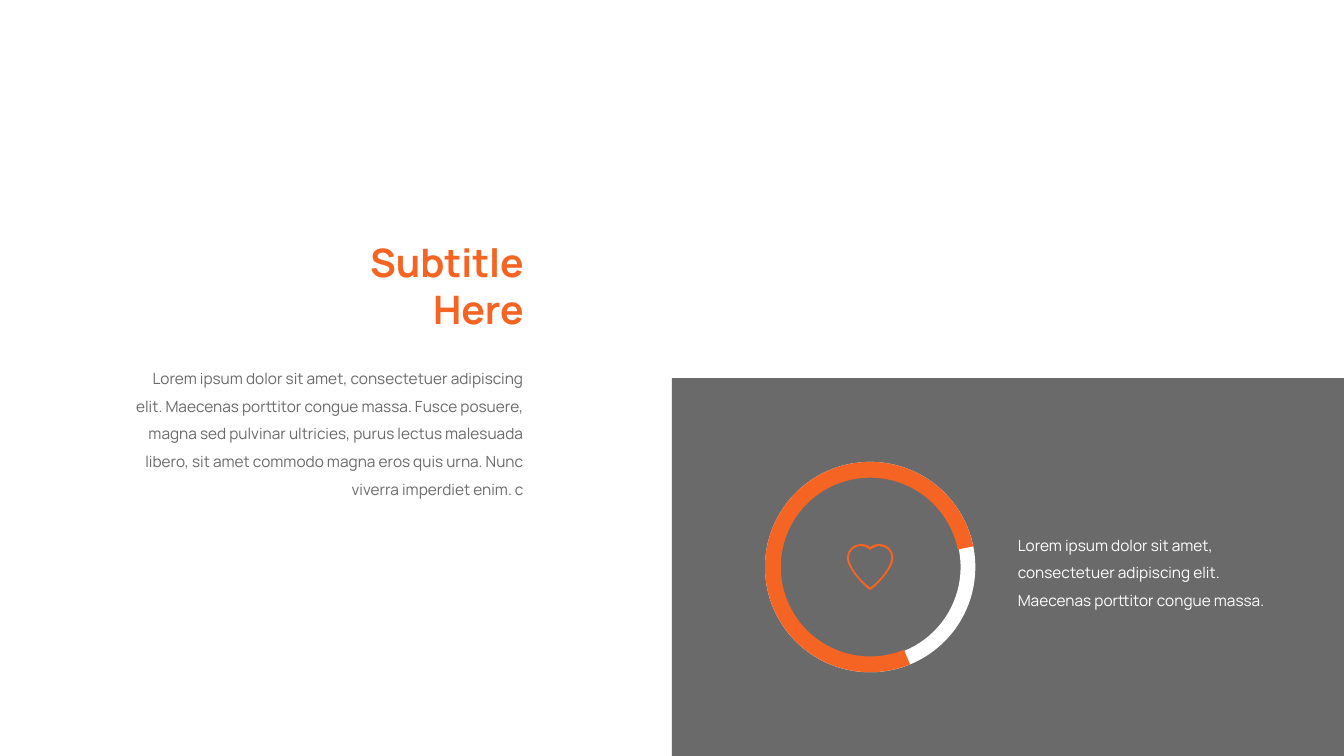
from lxml import etree
from pptx import Presentation
from pptx.dml.color import RGBColor
from pptx.enum.shapes import MSO_SHAPE as Shape
from pptx.enum.text import MSO_ANCHOR as Anchor, MSO_AUTO_SIZE as AutoSize, PP_ALIGN as Align
from pptx.oxml.ns import qn
from pptx.util import Cm, Pt

COLORS = {"gray": "6A6A6A", "orange": "F56423", "white": "FFFFFF"}
WIDTH, HEIGHT = 33.87, 19.05
RING_X, RING_Y, RING_SIZE = 19.28, 11.64, 5.3
HEART_TOP, HEART_UNIT = 13.71, 0.0254
HEART_OUTER = [(0, 3), (2, 1), (6, 0), (9, 0), (17, 0), (23, 6), (23, 13),
               (23, 14), (23, 15), (23, 15), (21, 28), (2, 45.5), (0, 45.5)]
HEART_INNER = [(0, 6), (0, 6), (1, 5), (1, 5), (4, 3), (6, 2), (9, 2),
               (16, 2), (21, 7), (21, 13), (21, 14), (21, 14), (21, 14),
               (20, 26), (4, 41), (0, 43)]


class SlideBuilder:
    font = "Manrope"

    def __init__(self, slide):
        self.slide = slide

    def paint(self, sp, color):
        sp.shadow.inherit = False
        sp.fill.solid()
        sp.fill.fore_color.rgb = RGBColor.from_string(COLORS[color])
        sp.line.fill.background()

    def shape(self, kind, x, y, w, h, color, adjustments=()):
        sp = self.slide.shapes.add_shape(kind, Cm(x), Cm(y), Cm(w), Cm(h))
        for i, value in enumerate(adjustments):
            sp.adjustments[i] = value
        self.paint(sp, color)

    def text(self, x, y, w, h, lines, size, color, align=Align.LEFT,
             spacing=1.0, bold=False, anchor=Anchor.TOP):
        sp = self.slide.shapes.add_textbox(Cm(x), Cm(y), Cm(w), Cm(h))
        tf = sp.text_frame
        tf.word_wrap = True
        tf.auto_size = AutoSize.SHAPE_TO_FIT_TEXT
        tf.vertical_anchor = anchor
        tf.text = "\n".join(lines)
        for p in tf.paragraphs:
            p.alignment = align
            p.line_spacing = spacing
            p.font.name = self.font
            p.font.size = Pt(size)
            p.font.bold = bold
            p.font.color.rgb = RGBColor.from_string(COLORS[color])

    def heart(self, center_x, top, unit, color):
        contours = []
        for right in (HEART_OUTER, HEART_INNER):
            left = [(-x, y) for x, y in reversed(right[:-1])]
            contours.append([(Cm(center_x + x * unit), Cm(top + y * unit))
                             for x, y in right + left])
        outer, inner = contours
        builder = self.slide.shapes.build_freeform(*outer[0])
        builder.add_line_segments(outer[1:], close=True)
        builder.move_to(*inner[0])
        builder.add_line_segments(inner[1:], close=True)
        sp = builder.convert_to_shape()
        self.curve(sp)
        self.paint(sp, color)

    def curve(self, sp):
        lines = list(sp.element.iter(qn("a:lnTo")))
        for i in range(0, len(lines), 3):
            bezier = etree.Element(qn("a:cubicBezTo"))
            lines[i].addprevious(bezier)
            for line in lines[i:i + 3]:
                bezier.append(line[0])
                line.getparent().remove(line)


def main():
    prs = Presentation()
    prs.slide_width, prs.slide_height = Cm(WIDTH), Cm(HEIGHT)
    s = SlideBuilder(prs.slides.add_slide(prs.slide_layouts[6]))

    s.shape(Shape.RECTANGLE, WIDTH / 2, HEIGHT / 2, WIDTH / 2, HEIGHT / 2, "gray")
    s.text(3.16, 8.94, 10.29, 3.71,
           ["Lorem ipsum dolor sit amet, consectetuer adipiscing elit. Maecenas porttitor "
            "congue massa. Fusce posuere, magna sed pulvinar ultricies, purus lectus "
            "malesuada libero, sit amet commodo magna eros quis urna. Nunc viverra "
            "imperdiet enim. c"], 11, "gray", Align.RIGHT, 1.5)
    s.text(3.16, 5.86, 10.29, 2.64, ["Subtitle", "Here"], 28, "orange",
           Align.RIGHT, bold=True, anchor=Anchor.BOTTOM)
    s.text(25.4, 13.14, 6.96, 2.29,
           ["Lorem ipsum dolor sit amet, consectetuer adipiscing elit. "
            "Maecenas porttitor congue massa."], 11, "white", spacing=1.5)

    ring = (RING_X, RING_Y, RING_SIZE, RING_SIZE)
    s.shape(Shape.DONUT, *ring, "white", [0.07])
    s.shape(Shape.BLOCK_ARC, *ring, "orange", [40.65, 209.21, 0.075])
    s.heart(RING_X + RING_SIZE / 2, HEART_TOP, HEART_UNIT, "orange")

    prs.save("out.pptx")


if __name__ == "__main__":
    main()
